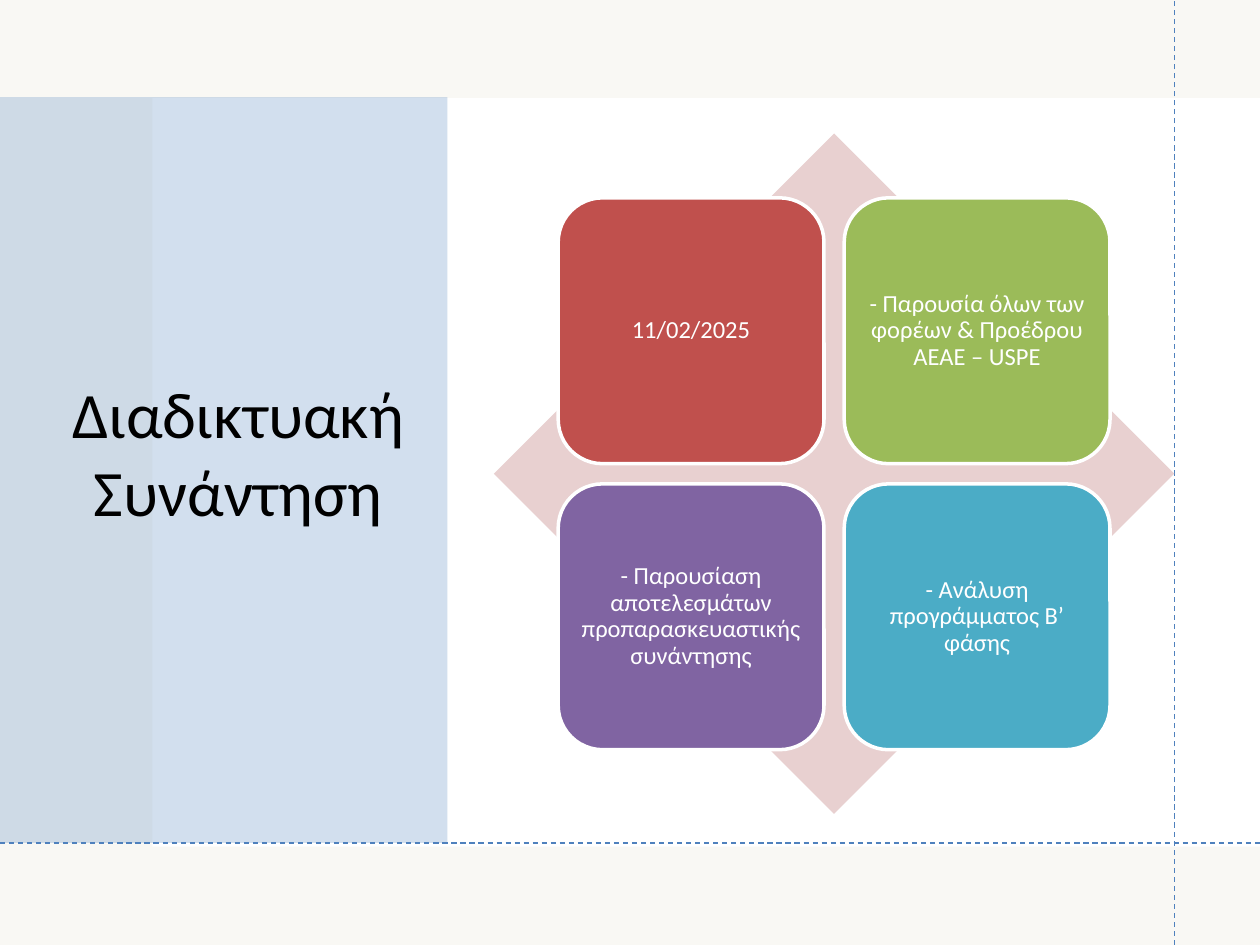
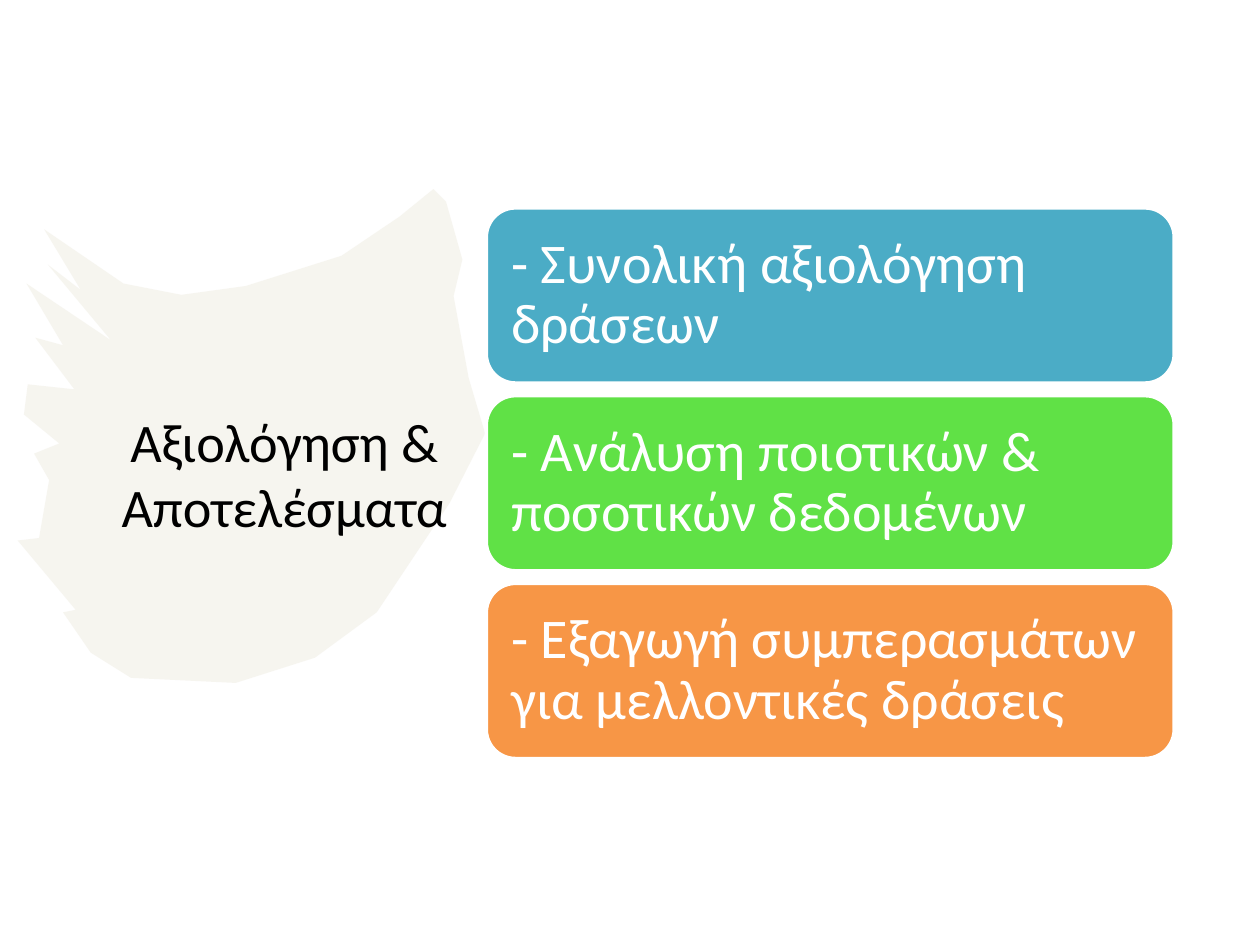
from dataclasses import dataclass

from lxml import etree
from pptx import Presentation
from pptx.dml.color import RGBColor
from pptx.enum.dml import MSO_LINE
from pptx.enum.shapes import MSO_CONNECTOR, MSO_SHAPE
from pptx.enum.text import MSO_ANCHOR, PP_ALIGN
from pptx.oxml.ns import qn
from pptx.util import Inches, Pt

RECTANGLE, DIAMOND, ROUNDED = MSO_SHAPE.RECTANGLE, MSO_SHAPE.DIAMOND, MSO_SHAPE.ROUNDED_RECTANGLE
STRAIGHT, DASH = MSO_CONNECTOR.STRAIGHT, MSO_LINE.DASH
LEFT, CENTER, MIDDLE = PP_ALIGN.LEFT, PP_ALIGN.CENTER, MSO_ANCHOR.MIDDLE
TITLE_ONLY = 5
WIDTH, HEIGHT = 10, 7.5


@dataclass(frozen=True)
class Theme:
    """Colours and type sizes shared by the slides."""
    font: str = "Calibri"
    white: str = "FFFFFF"
    black: str = "000000"
    beige: str = "EEECE1"
    blue: str = "4F81BD"
    pink: str = "E8D0D0"
    red: str = "C0504D"
    green: str = "9BBB59"
    purple: str = "8064A2"
    aqua: str = "4BACC6"
    lime: str = "60E146"
    orange: str = "F79646"
    meeting_title: int = 37
    results_title: int = 31
    quadrant: int = 14
    result: int = 32


THEME = Theme()

QUADRANTS = [
    ("11/02/2025", THEME.red),
    ("- Παρουσία όλων των φορέων & Προέδρου ΑΕΑΕ – USPE", THEME.green),
    ("- Παρουσίαση αποτελεσμάτων προπαρασκευαστικής συνάντησης", THEME.purple),
    ("- Ανάλυση προγράμματος Β’ φάσης", THEME.aqua),
]
RESULTS = [
    ("- Συνολική αξιολόγηση δράσεων", THEME.aqua),
    ("- Ανάλυση ποιοτικών & ποσοτικών δεδομένων", THEME.lime),
    ("- Εξαγωγή συμπερασμάτων για μελλοντικές δράσεις", THEME.orange),
]
BRUSH_OUTLINE = [
    (330, 0), (340, 10), (353, 56), (346, 85), (358, 150), (371, 194), (343, 249),
    (285, 336), (236, 372), (173, 392), (90, 388), (58, 368), (36, 336), (46, 334),
    (0, 279), (17, 277), (25, 231), (13, 210), (33, 202), (5, 179), (8, 155),
    (45, 159), (14, 118), (36, 124), (7, 75), (74, 120), (24, 60), (50, 80),
    (21, 32), (84, 75), (130, 84), (181, 77), (257, 53), (303, 22),
]


def paint(shape, colour, opacity=100, outline=None):
    """Give a shape a flat fill, with an outline only where a colour is named."""
    shape.shadow.inherit = False
    shape.fill.solid()
    shape.fill.fore_color.rgb = RGBColor.from_string(colour)
    if opacity < 100:
        fill_colour = shape.element.spPr.xpath("a:solidFill/a:srgbClr")[0]
        etree.SubElement(fill_colour, qn("a:alpha"), val=str(opacity * 1000))
    if outline:
        shape.line.color.rgb = RGBColor.from_string(outline)
        shape.line.width = Pt(2)
    else:
        shape.line.fill.background()


def add_block(slide, kind, box, colour, opacity=100, outline=None):
    """Add a preset shape filling the box."""
    block = slide.shapes.add_shape(kind, *map(Inches, box))
    paint(block, colour, opacity, outline)
    return block


def write(shape, text, size, colour, align):
    """Write one vertically centred paragraph in a shape."""
    frame = shape.text_frame
    frame.word_wrap = True
    frame.vertical_anchor = MIDDLE
    frame.text = text
    paragraph = frame.paragraphs[0]
    paragraph.alignment = align
    paragraph.font.name = THEME.font
    paragraph.font.size = Pt(size)
    paragraph.font.color.rgb = RGBColor.from_string(colour)
    return paragraph


def add_card(slide, box, text, colour, size, inset, align):
    """Add a rounded card with white text."""
    card = add_block(slide, ROUNDED, box, colour, outline=THEME.white)
    write(card, text, size, THEME.white, align).line_spacing = 0.9
    frame = card.text_frame
    frame.margin_left = frame.margin_right = Inches(inset)
    frame.margin_top = frame.margin_bottom = Inches(inset)


def place_title(slide, box, text, size):
    """Move the title placeholder to the box, in front of the backdrop."""
    title = slide.shapes.title
    title.left, title.top, title.width, title.height = map(Inches, box)
    write(title, text, size, THEME.black, CENTER)
    slide.shapes.element.append(title.element)


def add_guide(slide, start, end):
    """Draw a thin dashed guide line."""
    guide = slide.shapes.add_connector(STRAIGHT, *map(Inches, start + end))
    guide.line.color.rgb = RGBColor.from_string(THEME.blue)
    guide.line.width = Pt(0.75)
    guide.line.dash_style = DASH
    etree.SubElement(guide.element.spPr, qn("a:effectLst"))


def add_matrix(slide, box):
    """Draw four cards in two columns over a diamond filling the box."""
    left, top, _, _ = box
    add_block(slide, DIAMOND, box, THEME.pink)
    card, step, margin = 2.11, 2.27, 0.51
    for index, (text, colour) in enumerate(QUADRANTS):
        row, column = divmod(index, 2)
        card_box = (left + margin + column * step, top + margin + row * step, card, card)
        add_card(slide, card_box, text, colour, THEME.quadrant, 0.06, CENTER)


def add_result_list(slide, box):
    """Stack the result cards evenly down the box."""
    left, top, width, height = box
    gap = 0.1
    card_height = (height - gap * (len(RESULTS) - 1)) / len(RESULTS)
    for index, (text, colour) in enumerate(RESULTS):
        card_box = (left, top + index * (card_height + gap), width, card_height)
        add_card(slide, card_box, text, colour, THEME.result, 0.13, LEFT)


def add_brush(slide, left, top):
    """Draw the pale brush stroke, outlined in hundredths of an inch."""
    builder = slide.shapes.build_freeform(*BRUSH_OUTLINE[0], scale=Inches(0.01))
    builder.add_line_segments(BRUSH_OUTLINE[1:])
    paint(builder.convert_to_shape(Inches(left), Inches(top)), THEME.beige, 50)


def new_slide(prs):
    """Add a title-only slide on a white background."""
    slide = prs.slides.add_slide(prs.slide_layouts[TITLE_ONLY])
    slide.background.fill.solid()
    slide.background.fill.fore_color.rgb = RGBColor.from_string(THEME.white)
    return slide


def build_meeting(prs):
    """Build the online meeting slide."""
    slide = new_slide(prs)
    add_block(slide, RECTANGLE, (0, 0, WIDTH, HEIGHT), THEME.beige, 35)
    add_block(slide, RECTANGLE, (1.21, 0.78, 8.79, 5.94), THEME.white)
    add_block(slide, RECTANGLE, (0, 0.77, 3.55, 5.92), THEME.blue, 25)
    place_title(slide, (0.41, 0.74, 2.96, 5.69), "Διαδικτυακή Συνάντηση", THEME.meeting_title)
    add_guide(slide, (9.32, HEIGHT), (9.32, 0))
    add_guide(slide, (0, 6.69), (WIDTH, 6.69))
    add_matrix(slide, (3.92, 1.06, 5.4, 5.4))


def build_results(prs):
    """Build the evaluation and results slide."""
    slide = new_slide(prs)
    add_brush(slide, 0.14, 1.5)
    place_title(slide, (0.82, 0.75, 2.87, 6.01), "Αξιολόγηση & Αποτελέσματα", THEME.results_title)
    add_result_list(slide, (3.86, 1.65, 5.46, 4.37))


def main():
    """Build and save the presentation."""
    prs = Presentation()
    prs.slide_width, prs.slide_height = Inches(WIDTH), Inches(HEIGHT)
    build_meeting(prs)
    build_results(prs)
    prs.save("out.pptx")


if __name__ == "__main__":
    main()
